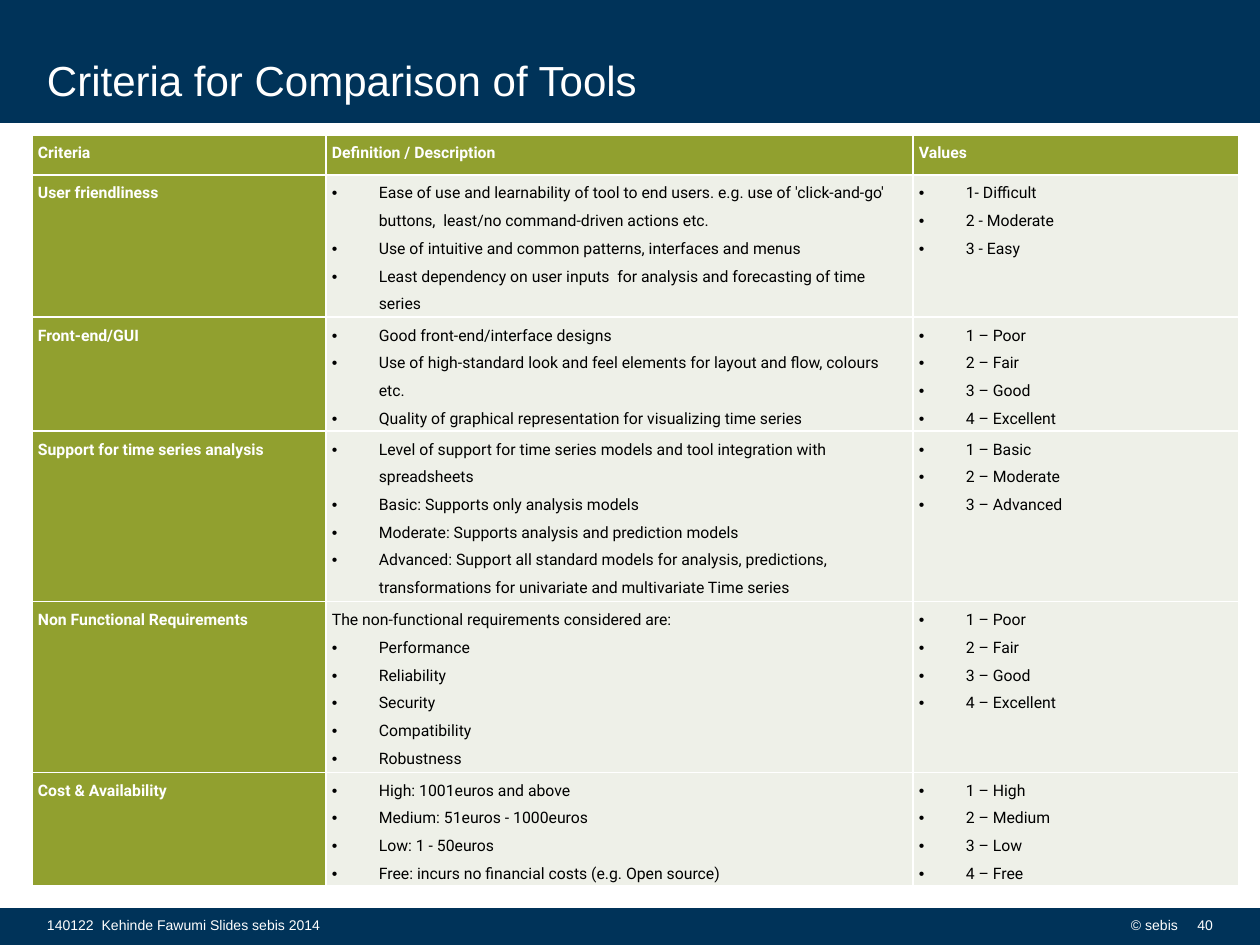
from lxml import etree
from pptx import Presentation
from pptx.dml.color import RGBColor
from pptx.enum.shapes import MSO_SHAPE
from pptx.enum.text import MSO_ANCHOR, PP_ALIGN
from pptx.oxml.ns import qn
from pptx.util import Emu, Pt

RECTANGLE = MSO_SHAPE.RECTANGLE
TOP, MIDDLE, BOTTOM = MSO_ANCHOR.TOP, MSO_ANCHOR.MIDDLE, MSO_ANCHOR.BOTTOM
LEFT, RIGHT = PP_ALIGN.LEFT, PP_ALIGN.RIGHT

EMU_PER_PX = 914400 / 126
COLORS = {"navy": "003359", "green": "91A02F", "pale": "EEF0E8",
          "white": "FFFFFF", "black": "000000"}

TITLE_FONT = {"name": "Arial", "size": Pt(24)}
FOOTER_FONT = {"name": "Arial", "size": Pt(8)}
LABEL_FONT = {"name": "Roboto", "size": Pt(9), "bold": True}
BODY_FONT = {"name": "Roboto", "size": Pt(9), "bold": False}

COLUMN_WIDTHS = [294, 587, 326]
ROW_HEIGHTS = [40, 138, 114, 166, 166, 113]
BULLET_INDENT = 47
HEADERS = ["Criteria", "Definition / Description", "Values"]
QUALITY_SCALE = ["1 – Poor", "2 – Fair", "3 – Good", "4 – Excellent"]
# Each row: criterion, plain lead-in line, bulleted description, bulleted values
CRITERIA = [
    ("User friendliness", None,
     ["Ease of use and learnability of tool to end users. e.g. use of "
      "'click-and-go' buttons,  least/no command-driven actions etc.",
      "Use of intuitive and common patterns, interfaces and menus",
      "Least dependency on user inputs  for analysis and forecasting of time series"],
     ["1- Difficult", "2 - Moderate", "3 - Easy"]),
    ("Front-end/GUI", None,
     ["Good front-end/interface designs",
      "Use of high-standard look and feel elements for layout and flow, colours etc.",
      "Quality of graphical representation for visualizing time series"],
     QUALITY_SCALE),
    ("Support for time series analysis", None,
     ["Level of support for time series models and tool integration with spreadsheets",
      "Basic: Supports only analysis models",
      "Moderate: Supports analysis and prediction models",
      "Advanced: Support all standard models for analysis, predictions, "
      "transformations for univariate and multivariate Time series"],
     ["1 – Basic", "2 – Moderate", "3 – Advanced"]),
    ("Non Functional Requirements", "The non-functional requirements considered are:",
     ["Performance", "Reliability", "Security", "Compatibility", "Robustness"],
     QUALITY_SCALE),
    ("Cost & Availability", None,
     ["High: 1001euros and above", "Medium: 51euros - 1000euros",
      "Low: 1 - 50euros", "Free: incurs no financial costs (e.g. Open source)"],
     ["1 – High", "2 – Medium", "3 – Low", "4 – Free"]),
]


def px(value):
    return Emu(round(value * EMU_PER_PX))


def color(name):
    return RGBColor.from_string(COLORS[name])


def set_values(target, values):
    for name, value in values.items():
        setattr(target, name, value)


def write(paragraph, text, font, color_name):
    run = paragraph.add_run()
    run.text = text
    set_values(run.font, font)
    run.font.color.rgb = color(color_name)


def add_band(slide, left, top, width, height):
    band = slide.shapes.add_shape(RECTANGLE, px(left), px(top), px(width), px(height))
    band.shadow.inherit = False
    band.fill.solid()
    band.fill.fore_color.rgb = color("navy")
    band.line.color.rgb = color("navy")
    band.line.width = Pt(1.35)


def add_label(slide, box, text, font, anchor=MIDDLE, align=LEFT):
    shape = slide.shapes.add_textbox(*(px(value) for value in box))
    set_values(shape.text_frame, {
        "word_wrap": True, "vertical_anchor": anchor, "margin_left": px(13),
        "margin_right": px(13), "margin_top": 0, "margin_bottom": 0})
    paragraph = shape.text_frame.paragraphs[0]
    paragraph.alignment = align
    write(paragraph, text, font, "white")


def add_header(slide, left, top, width, height):
    add_band(slide, left, top, width, height)
    add_label(slide, (left + 34, top + 5, 1038, 99),
              "Criteria for Comparison of Tools", TITLE_FONT, BOTTOM)


def add_footer(slide, left, top, width, height):
    add_band(slide, left, top, width, height)
    add_label(slide, (left + 34, top - 4, 596, 40),
              "140122  Kehinde Fawumi Slides sebis 2014", FOOTER_FONT)
    # The page number box is wide enough to keep its digits on one line
    for offset, label_width, text in [(970, 221, "© sebis"), (1171, 55, "40")]:
        add_label(slide, (left + offset, top - 4, label_width, 40), text,
                  FOOTER_FONT, align=RIGHT)


def add_bullet(paragraph):
    properties = paragraph._p.get_or_add_pPr()
    properties.set("marL", str(px(BULLET_INDENT)))
    properties.set("indent", str(-px(BULLET_INDENT)))
    etree.SubElement(properties, qn("a:buFont"), typeface="Arial")
    etree.SubElement(properties, qn("a:buChar"), char="•")


def fill_cell(cell, lines, font, text_color, fill_color):
    """Style a cell; lines is a list of (text, bulleted) pairs."""
    cell.fill.solid()
    cell.fill.fore_color.rgb = color(fill_color)
    set_values(cell, {"margin_left": px(6), "margin_right": px(6), "margin_top": 0,
                      "margin_bottom": 0, "vertical_anchor": TOP})
    frame = cell.text_frame
    for index, (text, bulleted) in enumerate(lines):
        paragraph = frame.add_paragraph() if index else frame.paragraphs[0]
        if bulleted:
            add_bullet(paragraph)
        paragraph.line_spacing = 1.5
        write(paragraph, text, font, text_color)


def add_criteria_table(slide, left, top):
    # The default table style supplies the white cell borders
    table = slide.shapes.add_table(
        len(ROW_HEIGHTS), len(COLUMN_WIDTHS), px(left), px(top),
        px(sum(COLUMN_WIDTHS)), px(sum(ROW_HEIGHTS))).table
    table.horz_banding = False
    for column, width in zip(table.columns, COLUMN_WIDTHS):
        column.width = px(width)
    for row, height in zip(table.rows, ROW_HEIGHTS):
        row.height = px(height)

    # Header row
    for index, text in enumerate(HEADERS):
        fill_cell(table.cell(0, index), [(text, False)], LABEL_FONT, "white", "green")

    # One row per criterion
    for row, (name, lead, details, values) in enumerate(CRITERIA, start=1):
        fill_cell(table.cell(row, 0), [(name, False)], LABEL_FONT, "white", "green")
        lead_lines = [(lead, False)] if lead else []
        bullets = [[(text, True) for text in items] for items in (details, values)]
        for column, lines in enumerate([lead_lines + bullets[0], bullets[1]], start=1):
            fill_cell(table.cell(row, column), lines, BODY_FONT, "black", "pale")


def main():
    presentation = Presentation()
    presentation.slide_width, presentation.slide_height = px(1260), px(945)
    slide = presentation.slides.add_slide(presentation.slide_layouts[6])
    add_footer(slide, 0, 909, 1260, 36)
    add_header(slide, 0, 1, 1260, 121)
    add_criteria_table(slide, 32, 135)
    presentation.save("out.pptx")


if __name__ == "__main__":
    main()
